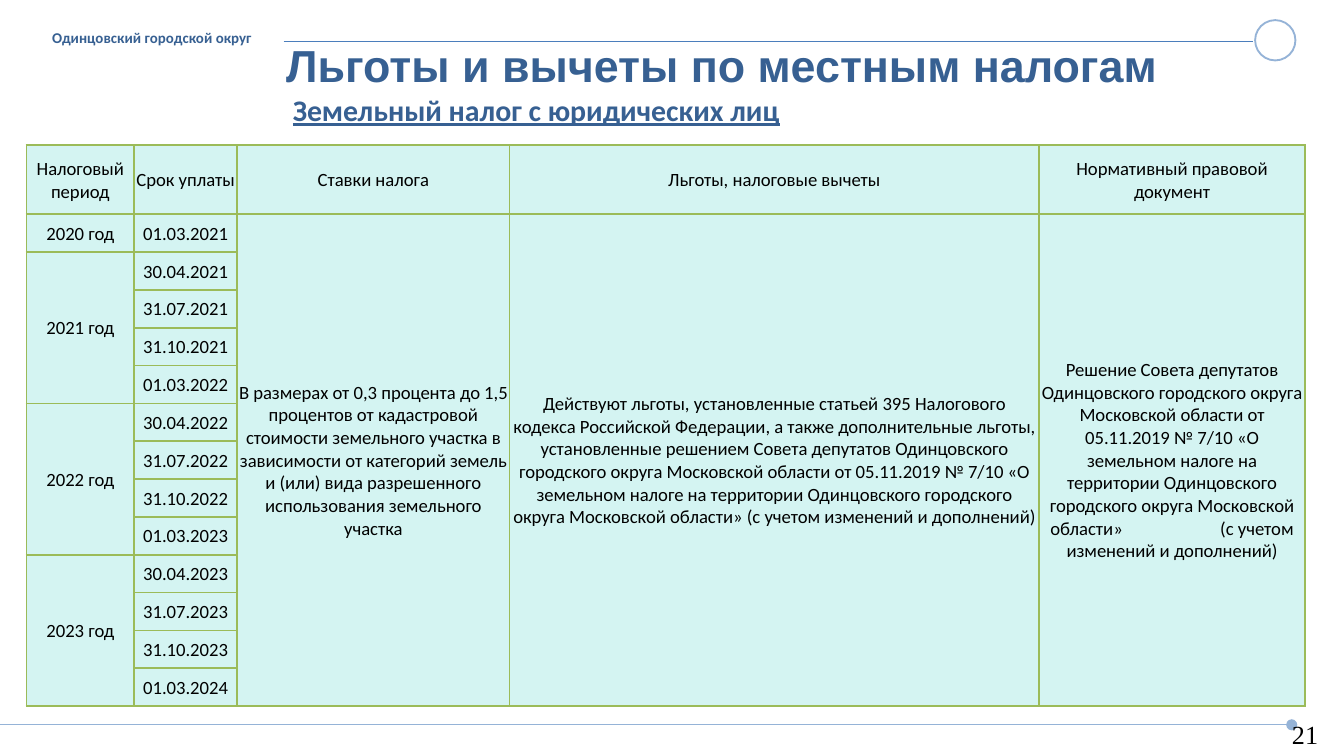
from pptx import Presentation
from pptx.dml.color import RGBColor
from pptx.enum.shapes import MSO_CONNECTOR, MSO_SHAPE
from pptx.enum.text import MSO_ANCHOR, PP_ALIGN
from pptx.oxml.ns import qn
from pptx.util import Pt
from lxml.etree import SubElement

NAVY = RGBColor(0x37, 0x60, 0x92)
RULE_BLUE = RGBColor(0x4B, 0x7E, 0xBC)
PALE_BLUE = RGBColor(0x95, 0xB3, 0xD7)
GREEN = RGBColor(0x9B, 0xBB, 0x59)
MINT = RGBColor(0xD4, 0xF4, 0xF2)
BLACK = RGBColor(0, 0, 0)


def add_run(paragraph, text, color, **format_values):
    run = paragraph.add_run()
    run.text = text
    run.font.color.rgb = color
    for name, value in format_values.items():
        setattr(run.font, name, value)


def add_box(left, top, width, height, anchor):
    frame = slide.shapes.add_textbox(Pt(left), Pt(top), Pt(width), Pt(height)).text_frame
    frame.word_wrap = True
    frame.vertical_anchor = anchor
    return frame


prs = Presentation()
prs.slide_width, prs.slide_height = Pt(720), Pt(405)
slide = prs.slides.add_slide(prs.slide_layouts[6])

# Header and footer rules
for left, right, y, color, dot_end in [
    (152, 671, 22.3, RULE_BLUE, False),
    (0, 692, 388.3, PALE_BLUE, True),
]:
    rule = slide.shapes.add_connector(MSO_CONNECTOR.STRAIGHT, Pt(left), Pt(y), Pt(right), Pt(y))
    rule.line.color.rgb = color
    rule.line.width = Pt(0.75)
    if dot_end:
        SubElement(rule.line._get_or_add_ln(), qn("a:tailEnd"), type="oval")
    SubElement(rule._element.spPr, qn("a:effectLst"))

# Header circle
circle = slide.shapes.add_shape(
    MSO_SHAPE.FLOWCHART_CONNECTOR, Pt(672.4), Pt(10.8), Pt(21.6), Pt(21.6))
circle.shadow.inherit = False
circle.fill.background()
circle.line.color.rgb = PALE_BLUE
circle.line.width = Pt(1)

# Title and subtitle
title = add_box(146.2, 16.6, 524.2, 55.4, MSO_ANCHOR.TOP)
add_run(title.paragraphs[0], "Льготы и вычеты по местным налогам", NAVY,
        name="Arial", size=Pt(24), bold=True)
subtitle = title.add_paragraph()
for text, underline in [(" ", False), ("Земельный налог с юридических лиц", True)]:
    add_run(subtitle, text, NAVY, name="Calibri", size=Pt(16), bold=True, underline=underline)

# District name and page number
district = add_box(20.9, 14.4, 123.8, 11.5, MSO_ANCHOR.MIDDLE)
add_run(district.paragraphs[0], "Одинцовский городской округ", NAVY,
        name="Calibri", size=Pt(8), bold=True)
page_number = add_box(683.3, 385.2, 31.7, 15.8, MSO_ANCHOR.MIDDLE)
page_number.paragraphs[0].alignment = PP_ALIGN.CENTER
add_run(page_number.paragraphs[0], "21", BLACK, name="Times New Roman", size=Pt(14))

# Table content by row and column
headings = ["Налоговый период", "Срок уплаты", "Ставки налога",
            "Льготы, налоговые вычеты", "Нормативный правовой документ"]
rates = ("В размерах от 0,3 процента до 1,5 процентов от кадастровой стоимости "
         "земельного участка в зависимости от категорий земель и (или) вида "
         "разрешенного использования земельного участка")
benefits = ("Действуют льготы, установленные статьей 395 Налогового кодекса Российской "
            "Федерации, а также дополнительные льготы, установленные решением Совета "
            "депутатов Одинцовского городского округа Московской области от 05.11.2019 "
            "№ 7/10 «О земельном налоге на территории Одинцовского городского округа "
            "Московской области» (с учетом изменений и дополнений)")
decision = ("Решение Совета депутатов Одинцовского городского округа Московской области "
            "от 05.11.2019 № 7/10 «О земельном налоге на территории Одинцовского "
            "городского округа Московской области»\t(с учетом изменений и дополнений)")

texts = {(0, column): heading for column, heading in enumerate(headings)}
texts.update({(1, 0): "2020 год", (1, 1): "01.03.2021",
              (1, 2): rates, (1, 3): benefits, (1, 4): decision})
merges = [(1, column, 13, column) for column in (2, 3, 4)]
for index, year in enumerate((2021, 2022, 2023)):
    first = 2 + 4 * index
    texts[first, 0] = f"{year} год"
    merges.append((first, 0, first + 3, 0))
    due_dates = [f"30.04.{year}", f"31.07.{year}", f"31.10.{year}", f"01.03.{year + 1}"]
    for offset, due_date in enumerate(due_dates):
        texts[first + offset, 1] = due_date

# Tax table
column_widths = [57.6, 55.2, 146, 283.6, 142.6]
row_heights = [37] + [20.27] * 13
tax_table = slide.shapes.add_table(
    len(row_heights), len(column_widths), Pt(14.2), Pt(77.8),
    Pt(sum(column_widths)), Pt(sum(row_heights))).table
for column, width in zip(tax_table.columns, column_widths):
    column.width = Pt(width)
for row, height in zip(tax_table.rows, row_heights):
    row.height = Pt(height)
for top, left, bottom, right in merges:
    tax_table.cell(top, left).merge(tax_table.cell(bottom, right))

cell_format = {"margin_left": Pt(0.5), "margin_right": Pt(0.5), "margin_top": Pt(0.7),
               "margin_bottom": 0, "vertical_anchor": MSO_ANCHOR.MIDDLE}
for r in range(len(row_heights)):
    for c in range(len(column_widths)):
        cell = tax_table.cell(r, c)
        for name, value in cell_format.items():
            setattr(cell, name, value)
        # Borders come before the fill in the cell properties
        for side in ("lnL", "lnR", "lnT", "lnB"):
            border = SubElement(cell._tc.get_or_add_tcPr(), qn(f"a:{side}"), w=str(Pt(1)))
            border_fill = SubElement(border, qn("a:solidFill"))
            SubElement(border_fill, qn("a:srgbClr"), val=str(GREEN))
        cell.fill.solid()
        cell.fill.fore_color.rgb = MINT
        if (r, c) in texts:
            paragraph = cell.text_frame.paragraphs[0]
            paragraph.alignment = PP_ALIGN.CENTER
            if "\t" in texts[r, c]:
                tab_list = SubElement(paragraph._p.get_or_add_pPr(), qn("a:tabLst"))
                SubElement(tab_list, qn("a:tab"), pos=str(Pt(91)), algn="l")
            add_run(paragraph, texts[r, c], BLACK, name="Calibri", size=Pt(10), bold=False)

prs.save("out.pptx")
